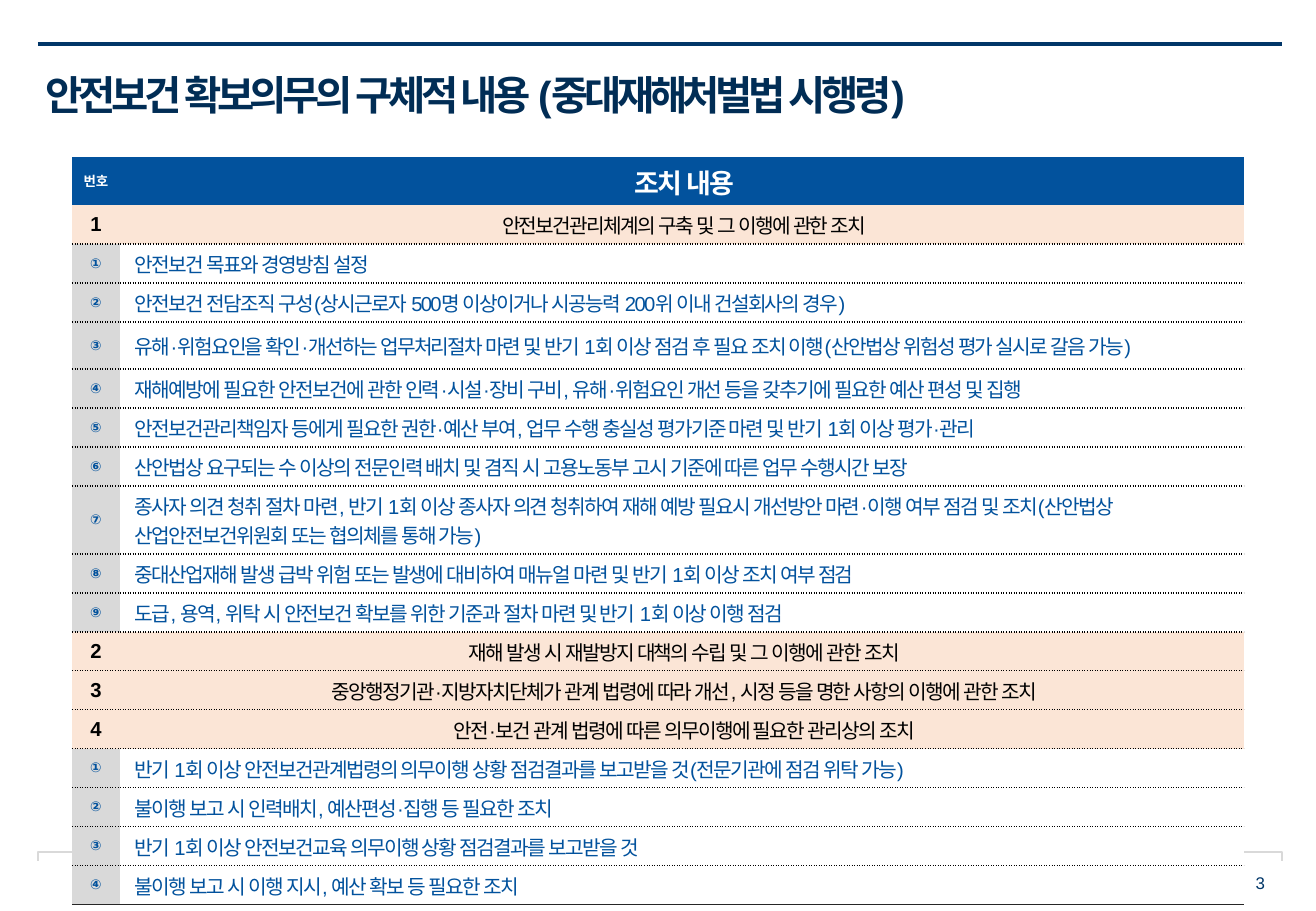
from dataclasses import dataclass

from lxml.etree import SubElement
from pptx import Presentation
from pptx.dml.color import RGBColor
from pptx.enum.lang import MSO_LANGUAGE_ID
from pptx.enum.shapes import MSO_CONNECTOR
from pptx.enum.text import MSO_ANCHOR, PP_ALIGN
from pptx.oxml.ns import qn
from pptx.util import Emu, Pt

EMU_PER_PX = 7526
FONT = "Arial"
COLORS = {
    "white": "FFFFFF",
    "black": "000000",
    "navy": "013668",
    "deep_navy": "012D55",
    "blue": "02529D",
    "peach": "FBE5D6",
    "gray": "D9D9D9",
    "charcoal": "262626",
}


@dataclass(frozen=True)
class Border:
    color: str
    width: float
    dash: str


@dataclass(frozen=True)
class CellStyle:
    fill: str
    color: str
    size: float
    bold: bool = True
    spacing: float = 0
    align: PP_ALIGN = PP_ALIGN.CENTER


@dataclass(frozen=True)
class RowStyle:
    number: CellStyle
    content: CellStyle


@dataclass(frozen=True)
class Measure:
    number: str
    content: str
    style: RowStyle
    height: int = 39


@dataclass(frozen=True)
class Column:
    width: int
    left_inset: int
    right_inset: int


DOTTED = Border("black", 1, "sysDot")
CLOSING = Border("charcoal", 0.5, "solid")
HEADER = RowStyle(
    CellStyle("blue", "white", 8),
    CellStyle("blue", "white", 16, spacing=-1),
)
SECTION = RowStyle(
    CellStyle("peach", "black", 12),
    CellStyle("peach", "black", 12, bold=False, spacing=-1),
)
ITEM = RowStyle(
    CellStyle("gray", "blue", 8),
    CellStyle("white", "blue", 12, bold=False, spacing=-1, align=PP_ALIGN.LEFT),
)
COLUMNS = [Column(48, 4, 4), Column(1124, 15, 10)]
MEASURES = [
    Measure("번호", "조치 내용", HEADER, 48),
    Measure("1", "안전보건관리체계의 구축 및 그 이행에 관한 조치", SECTION),
    Measure("①", "안전보건 목표와 경영방침 설정", ITEM),
    Measure("②", "안전보건 전담조직 구성(상시근로자 500명 이상이거나 시공능력 200위 이내 건설회사의 경우)", ITEM),
    Measure("③", "유해·위험요인을 확인·개선하는 업무처리절차 마련 및 반기 1회 이상 점검 후 필요 조치 이행"
            "(산안법상 위험성 평가 실시로 갈음 가능)", ITEM, 47),
    Measure("④", "재해예방에 필요한 안전보건에 관한 인력·시설·장비 구비, 유해·위험요인 개선 등을 갖추기에 "
            "필요한 예산 편성 및 집행", ITEM),
    Measure("⑤", "안전보건관리책임자 등에게 필요한 권한·예산 부여, 업무 수행 충실성 평가기준 마련 및 "
            "반기 1회 이상 평가·관리", ITEM),
    Measure("⑥", "산안법상 요구되는 수 이상의 전문인력 배치 및 겸직 시 고용노동부 고시 기준에 따른 "
            "업무 수행시간 보장", ITEM),
    Measure("⑦", "종사자 의견 청취 절차 마련, 반기 1회 이상 종사자 의견 청취하여 재해 예방 필요시 개선방안 "
            "마련·이행 여부 점검 및 조치(산안법상 산업안전보건위원회 또는 협의체를 통해 가능)", ITEM, 68),
    Measure("⑧", "중대산업재해 발생 급박 위험 또는 발생에 대비하여 매뉴얼 마련 및 반기 1회 이상 조치 여부 점검", ITEM),
    Measure("⑨", "도급, 용역, 위탁 시 안전보건 확보를 위한 기준과 절차 마련 및 반기 1회 이상 이행 점검", ITEM),
    Measure("2", "재해 발생 시 재발방지 대책의 수립 및 그 이행에 관한 조치", SECTION),
    Measure("3", "중앙행정기관·지방자치단체가 관계 법령에 따라 개선, 시정 등을 명한 사항의 이행에 관한 조치", SECTION),
    Measure("4", "안전·보건 관계 법령에 따른 의무이행에 필요한 관리상의 조치", SECTION),
    Measure("①", "반기 1회 이상 안전보건관계법령의 의무이행 상황 점검결과를 보고받을 것(전문기관에 점검 위탁 가능)", ITEM),
    Measure("②", "불이행 보고 시 인력배치, 예산편성·집행 등 필요한 조치", ITEM),
    Measure("③", "반기 1회 이상 안전보건교육 의무이행 상황 점검결과를 보고받을 것", ITEM),
    Measure("④", "불이행 보고 시 이행 지시, 예산 확보 등 필요한 조치", ITEM),
]


def px(value: int) -> Emu:
    return Emu(value * EMU_PER_PX)


def rgb(name: str) -> RGBColor:
    return RGBColor.from_string(COLORS[name])


def add_span(para, text: str, size: float, color: str, bold: bool = False, spacing: float = 0):
    span = para.add_run()
    span.text = text
    span.font.name = FONT
    span.font.size = Pt(size)
    span.font.bold = bold
    span.font.language_id = MSO_LANGUAGE_ID.KOREAN
    span.font.color.rgb = rgb(color)
    span._r.get_or_add_rPr().set("spc", str(round(spacing * 100)))
    return span


def add_box(page, left: int, top: int, width: int, height: int):
    box = page.shapes.add_textbox(px(left), px(top), px(width), px(height))
    box.text_frame.word_wrap = True
    box.text_frame.vertical_anchor = MSO_ANCHOR.MIDDLE
    return box.text_frame.paragraphs[0]


def draw_frame(page) -> None:
    builder = page.shapes.build_freeform(38, 861, scale=EMU_PER_PX)
    builder.add_line_segments([(38, 852), (1282, 852), (1282, 861)], close=False)
    bracket = builder.convert_to_shape()
    bracket.shadow.inherit = False
    bracket.fill.background()
    bracket.line.color.rgb = rgb("gray")
    bracket.line.width = Pt(0.75)

    rule = page.shapes.add_connector(MSO_CONNECTOR.STRAIGHT, px(38), px(44), px(1282), px(44))
    rule.line.color.rgb = rgb("navy")
    rule.line.width = Pt(2)
    SubElement(rule._element.spPr, qn("a:effectLst"))


def draw_title(page) -> None:
    para = add_box(page, 34, 53, 1248, 79)
    para.line_spacing = 1.09
    span = add_span(para, "안전보건 확보의무의 구체적 내용 (중대재해처벌법 시행령)", 24, "navy", True, -2.6)
    span.font.fill.gradient()
    span.font.fill.gradient_angle = 0
    stops = span.font.fill.gradient_stops
    for stop, position, color in zip(stops, (0.21, 0.73), ("deep_navy", "navy")):
        stop.position = position
        stop.color.rgb = rgb(color)


def set_borders(cell, top: Border | None, bottom: Border | None) -> None:
    properties = cell._tc.get_or_add_tcPr()
    for tag, border in (("a:lnL", None), ("a:lnR", None), ("a:lnT", top), ("a:lnB", bottom)):
        line = SubElement(properties, qn(tag))
        if border is None:
            SubElement(line, qn("a:noFill"))
            continue
        line.set("w", str(Pt(border.width)))
        fill = SubElement(line, qn("a:solidFill"))
        SubElement(fill, qn("a:srgbClr")).set("val", COLORS[border.color])
        SubElement(line, qn("a:prstDash")).set("val", border.dash)


def fill_cell(cell, text: str, style: CellStyle, column: Column) -> None:
    cell.fill.solid()
    cell.fill.fore_color.rgb = rgb(style.fill)
    cell.vertical_anchor = MSO_ANCHOR.MIDDLE
    cell.margin_left, cell.margin_right = px(column.left_inset), px(column.right_inset)
    cell.margin_top = cell.margin_bottom = px(5)
    para = cell.text_frame.paragraphs[0]
    para.alignment = style.align
    add_span(para, text, style.size, style.color, style.bold, style.spacing)


def draw_measures(page) -> None:
    width = sum(column.width for column in COLUMNS)
    height = sum(measure.height for measure in MEASURES)
    table = page.shapes.add_table(
        len(MEASURES), len(COLUMNS), px(72), px(157), px(width), px(height)
    ).table
    table.first_row = table.horz_banding = False
    for index, column in enumerate(COLUMNS):
        table.columns[index].width = px(column.width)
    last = len(MEASURES) - 1
    for index, measure in enumerate(MEASURES):
        table.rows[index].height = px(measure.height)
        top = DOTTED if index > 1 else None
        bottom = None if index == 0 else CLOSING if index == last else DOTTED
        texts = (measure.number, measure.content)
        styles = (measure.style.number, measure.style.content)
        for cell, text, style, column in zip(table.rows[index].cells, texts, styles, COLUMNS):
            set_borders(cell, top, bottom)
            fill_cell(cell, text, style, column)


def draw_page_number(page) -> None:
    para = add_box(page, 982, 858, 295, 49)
    para.alignment = PP_ALIGN.RIGHT
    add_span(para, "3", 10, "navy")


def main() -> None:
    deck = Presentation()
    deck.slide_width, deck.slide_height = px(1316), px(911)
    page = deck.slides.add_slide(deck.slide_layouts[6])
    draw_frame(page)
    draw_title(page)
    draw_measures(page)
    draw_page_number(page)
    deck.save("out.pptx")


if __name__ == "__main__":
    main()
